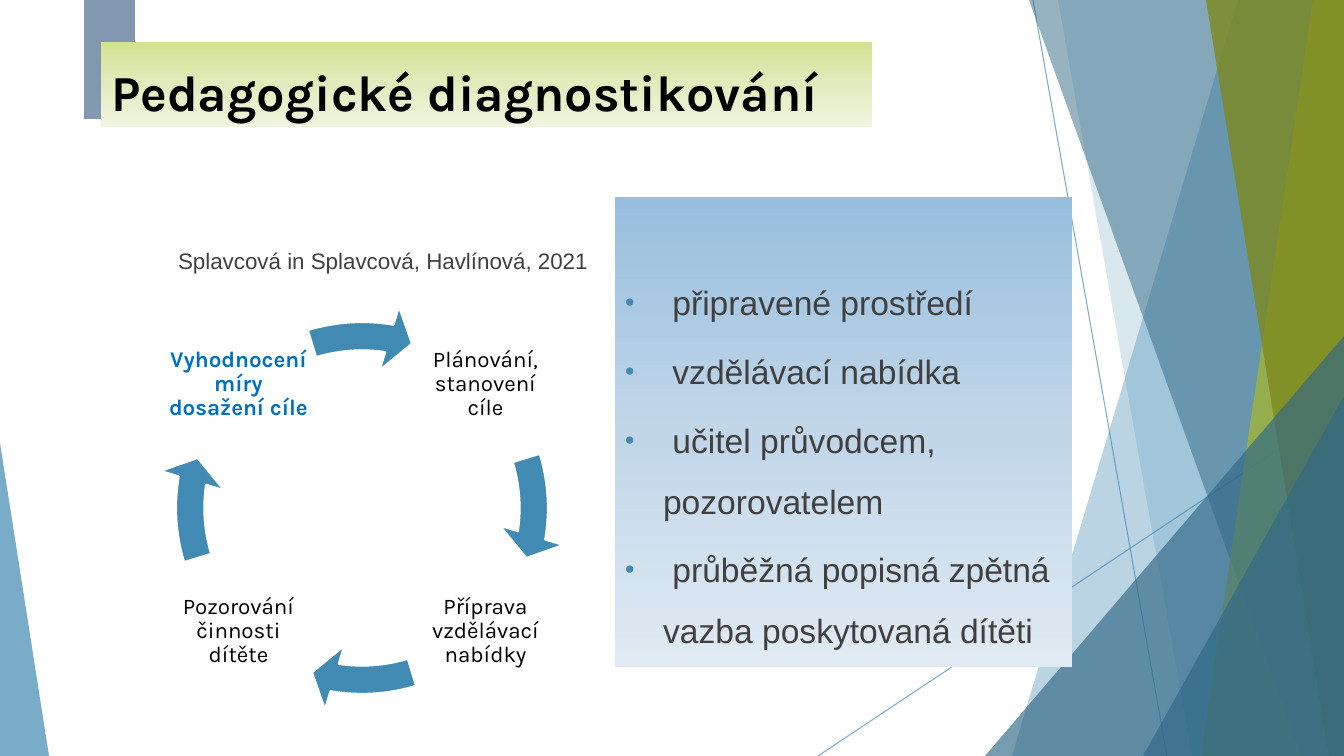
"""Builds the slide about the cycle of pedagogical diagnostics."""
from copy import deepcopy

from lxml.etree import SubElement
from pptx import Presentation
from pptx.dml.color import RGBColor
from pptx.enum.shapes import MSO_CONNECTOR, MSO_SHAPE
from pptx.enum.text import MSO_ANCHOR, MSO_AUTO_SIZE, PP_ALIGN
from pptx.oxml.ns import qn
from pptx.util import Pt

EMU_PER_PX = 914400 / 100.8
WIDTH, HEIGHT = 1344, 756
COLOURS = {
    "blue": "418AB3", "deep": "316886", "lime": "A6B727", "olive": "7D891D",
    "slate": "8397B0", "text": "404040", "black": "000000", "white": "FFFFFF",
    "accent": "0070C0",
}
TITLE_FADE = ("D4E292", "E2EBBE", "F0F5DF")
LIST_FADE = ("98BEDE", "C1D6E9", "E1EAF3")
BANDS = [
    (1238, 1012, "blue", 36), (1058, 1192, "blue", 20),
    (1029, 1301, "deep", 50), (1313, 1201, "lime", 70),
    (1206, 1329, "olive", 80),
]
TRIANGLES = [
    ((985, 336, 359, 420), 1, "deep", 66),
    ((1143, 396, 201, 360), 1, "deep", 66),
    ((0, 443, 49, 313), 0, "blue", 70),
]
RAYS = [(1033, 0, 1167, 756), (1344, 406, 818, 756)]
STEPS = [
    (413, 312, "Plánování, stanovení cíle", "black", False),
    (413, 559, "Příprava vzdělávací nabídky", "black", False),
    (166, 559, "Pozorování činnosti dítěte", "black", False),
    (166, 312, "Vyhodnocení míry dosažení cíle", "accent", True),
]
POINTS = [
    " připravené prostředí",
    " vzdělávací nabídka",
    " učitel průvodcem, pozorovatelem",
    " průběžná popisná zpětná vazba poskytovaná dítěti",
]
FULL_TURN, QUARTER_TURN = 216, 54


def px(*lengths):
    """Turn pixel lengths into a list of EMU."""
    return [round(length * EMU_PER_PX) for length in lengths]


def apply(target, values):
    """Set each named attribute on the target."""
    for name, value in values.items():
        setattr(target, name, value)


def rgb(name):
    """Look up a named colour."""
    return RGBColor.from_string(COLOURS[name])


def set_alpha(parent, opacity):
    """Make the colour under the parent partly transparent."""
    for colour in parent.iter(qn("a:srgbClr")):
        SubElement(colour, qn("a:alpha"), val=str(opacity * 1000))


def paint(shape, colour, opacity=100):
    """Give a shape a plain fill without line or shadow."""
    shape.shadow.inherit = False
    shape.fill.solid()
    shape.fill.fore_color.rgb = rgb(colour)
    shape.line.fill.background()
    if opacity < 100:
        set_alpha(shape.element.spPr, opacity)


def fade(shape, hues):
    """Fill a shape from top to bottom with three colours."""
    shape.fill.gradient()
    shape.fill.gradient_angle = 270
    stops = shape.element.spPr.find(".//" + qn("a:gsLst"))
    stops.insert(1, deepcopy(stops[0]))
    for index, stop in enumerate(shape.fill.gradient_stops):
        stop.color.rgb = RGBColor.from_string(hues[index])
        stop.position = index / 2


def write(frame, lines, colour, font, layout):
    """Write one formatted paragraph for each line."""
    for index, line in enumerate(lines):
        para = frame.add_paragraph() if index else frame.paragraphs[0]
        apply(para, layout)
        span = para.add_run()
        span.text = line
        apply(span.font, font)
        span.font.color.rgb = rgb(colour)


def place(holder, box, frame_values):
    """Move a placeholder to its box, in front of what is there."""
    apply(holder, dict(zip(("left", "top", "width", "height"), px(*box))))
    apply(holder.text_frame, {
        "word_wrap": True, "auto_size": MSO_AUTO_SIZE.NONE, **frame_values})
    holder.element.getparent().append(holder.element)


def set_bullets(frame, indent, symbol):
    """Set the indent and bullet of every paragraph."""
    for para in frame.paragraphs:
        settings = para._p.get_or_add_pPr()
        margin = px(indent)[0]
        settings.set("marL", str(margin))
        settings.set("indent", str(-margin))
        if not symbol:
            SubElement(settings, qn("a:buNone"))
            continue
        colour = SubElement(settings, qn("a:buClr"))
        SubElement(colour, qn("a:srgbClr"), val=COLOURS["blue"])
        SubElement(settings, qn("a:buSzPct"), val="80000")
        SubElement(settings, qn("a:buFont"), typeface="Arial")
        SubElement(settings, qn("a:buChar"), char=symbol)


def add_ray(page, ends):
    """Draw a thin line across the decoration."""
    ray = page.shapes.add_connector(MSO_CONNECTOR.STRAIGHT, *px(*ends))
    ray.line.color.rgb = rgb("blue")
    ray.line.width = Pt(0.75)
    set_alpha(ray.element.spPr, 70)
    SubElement(ray.element.spPr, qn("a:effectLst"))


def add_band(page, top, bottom, colour, opacity):
    """Draw a band from a slanted edge to the right side."""
    builder = page.shapes.build_freeform(top, 0, EMU_PER_PX)
    builder.add_line_segments([(WIDTH, 0), (WIDTH, HEIGHT), (bottom, HEIGHT)])
    paint(builder.convert_to_shape(), colour, opacity)


def add_triangle(page, box, apex, colour, opacity):
    """Draw a right-angled triangle."""
    triangle = page.shapes.add_shape(MSO_SHAPE.ISOSCELES_TRIANGLE, *px(*box))
    triangle.adjustments[0] = apex
    paint(triangle, colour, opacity)


def add_step(page, left, top, label, colour, bold):
    """Write one step of the cycle."""
    frame = page.shapes.add_textbox(*px(left, top, 145, 145)).text_frame
    sides = ("margin_left", "margin_top", "margin_right", "margin_bottom")
    apply(frame, dict.fromkeys(sides, px(2)[0]))
    apply(frame, {"word_wrap": True, "vertical_anchor": MSO_ANCHOR.MIDDLE})
    write(frame, [label], colour,
          {"name": "Karla", "size": Pt(16), "bold": bold},
          {"alignment": PP_ALIGN.CENTER, "line_spacing": 0.9})


def add_cycle_arrow(page, turn):
    """Draw the arrow that follows a step, turned by quarters."""
    arrow = page.shapes.add_shape(
        MSO_SHAPE.CIRCULAR_ARROW, *px(157, 303, 410, 410))
    offset = turn * QUARTER_TURN
    values = (0.069, 4.652, 5.501 + offset,
              (205.847 + offset) % FULL_TURN, 0.081)
    for index, value in enumerate(values):
        arrow.adjustments[index] = value
    paint(arrow, "blue")
    arrow.line.color.rgb = rgb("white")
    arrow.line.width = Pt(1.5)


def add_decoration(page):
    """Draw the coloured background shapes."""
    for ends in RAYS:
        add_ray(page, ends)
    for band in BANDS:
        add_band(page, *band)
    for triangle in TRIANGLES:
        add_triangle(page, *triangle)
    tab = page.shapes.add_shape(MSO_SHAPE.RECTANGLE, *px(84, 0, 51, 119))
    paint(tab, "slate")


def fill_placeholders(page):
    """Write the citation, the title and the list."""
    title, citation, points = page.placeholders
    spacing = {"alignment": PP_ALIGN.LEFT, "line_spacing": 1.5,
               "space_before": Pt(6)}
    place(citation, (168, 229, 542, 470), {})
    write(citation.text_frame, ["Splavcová in Splavcová, Havlínová, 2021"],
          "text", {"name": "Arial", "size": Pt(16)}, spacing)
    set_bullets(citation.text_frame, 0, "")
    place(title, (101, 42, 771, 85), {"vertical_anchor": MSO_ANCHOR.BOTTOM})
    fade(title, TITLE_FADE)
    write(title.text_frame, ["Pedagogické diagnostikování"], "black",
          {"name": "Karla", "size": Pt(36), "bold": True},
          {"alignment": PP_ALIGN.LEFT})
    place(points, (615, 197, 457, 470), {"margin_top": px(65)[0]})
    fade(points, LIST_FADE)
    write(points.text_frame, POINTS, "text",
          {"name": "Arial", "size": Pt(24)}, spacing)
    set_bullets(points.text_frame, 38, "•")


def main():
    """Build and save the deck."""
    deck = Presentation()
    deck.slide_width, deck.slide_height = px(WIDTH, HEIGHT)
    page = deck.slides.add_slide(deck.slide_layouts[3])
    add_decoration(page)
    fill_placeholders(page)
    for turn, step in enumerate(STEPS):
        add_step(page, *step)
        add_cycle_arrow(page, turn)
    deck.save("out.pptx")


if __name__ == "__main__":
    main()
